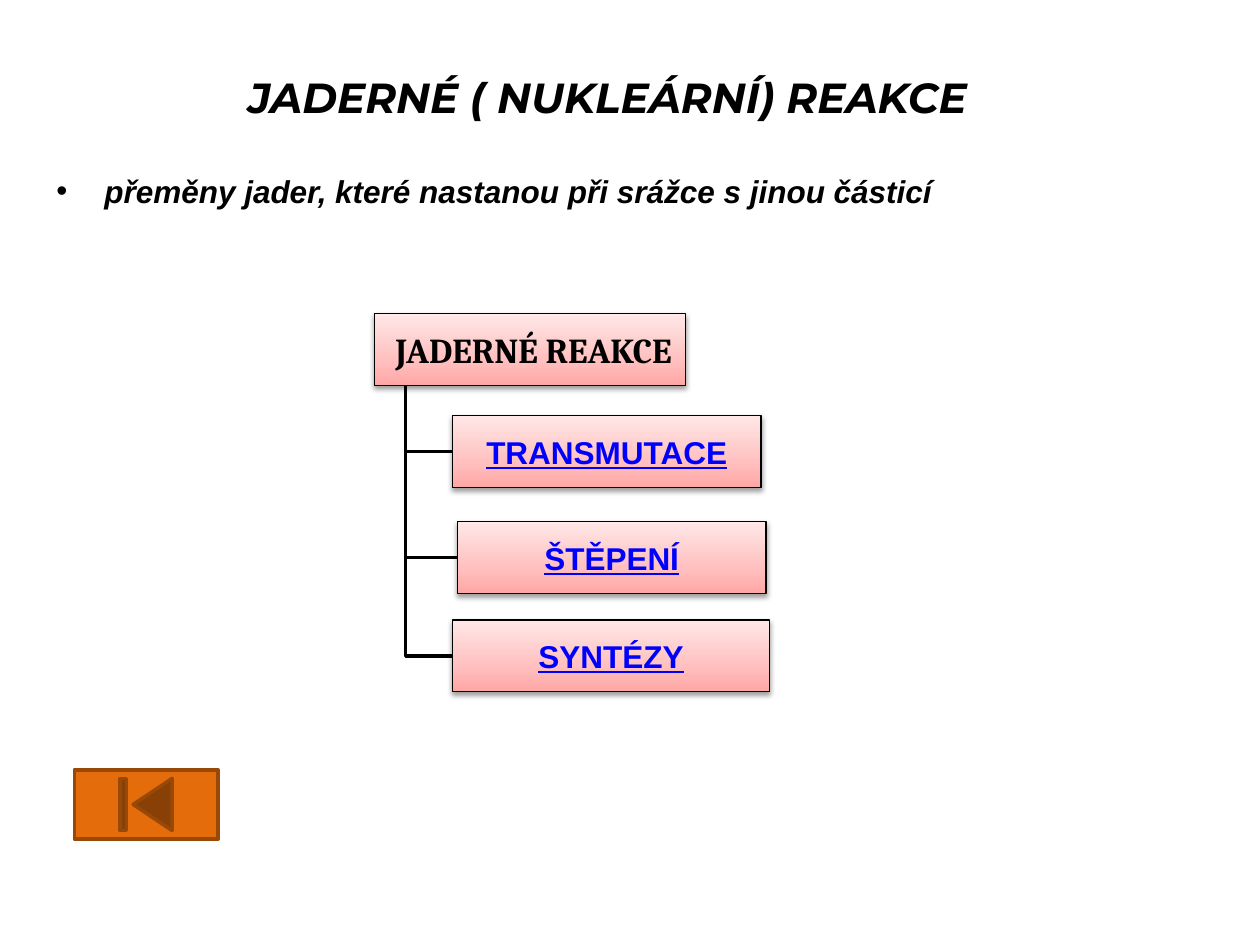
from lxml.etree import SubElement
from pptx import Presentation
from pptx.dml.color import RGBColor
from pptx.enum.shapes import MSO_SHAPE
from pptx.enum.text import MSO_ANCHOR, PP_ALIGN
from pptx.oxml import parse_xml
from pptx.oxml.ns import nsdecls, qn
from pptx.util import Inches, Pt

BLACK = RGBColor(0x00, 0x00, 0x00)
LINK_BLUE = RGBColor(0x00, 0x00, 0xFF)
ORANGE = RGBColor(0xE4, 0x6C, 0x0A)
BROWN = RGBColor(0x98, 0x48, 0x07)
PINK_STOPS = [
    (0, RGBColor(0xFF, 0xA6, 0xA5)),
    (35, RGBColor(0xFF, 0xC0, 0xBF)),
    (100, RGBColor(0xFF, 0xE7, 0xE7)),
]

HEADING = dict(name="Montserrat", size=Pt(24), bold=True, italic=True)
BODY = dict(name="Arial", size=Pt(18), bold=True, italic=True)
ROOT = dict(name="Cambria", size=Pt(20), bold=True)
LINK = dict(name="Arial", size=Pt(18), bold=True, underline=True)

BOX_H = 0.57
ROOT_BOX = (2.97, 2.49, 2.47)
TRUNK_X = 3.22
BRANCHES = [
    ("TRANSMUTACE", 3.59, 3.3, 2.45),
    ("ŠTĚPENÍ", 3.63, 4.14, 2.45),
    ("SYNTÉZY", 3.59, 4.92, 2.52),
]


def write(sp, text, font, color, align):
    tf = sp.text_frame
    tf.word_wrap = True
    tf.vertical_anchor = MSO_ANCHOR.MIDDLE
    p = tf.paragraphs[0]
    p.alignment = align
    r = p.add_run()
    r.text = text
    for key, value in font.items():
        setattr(r.font, key, value)
    r.font.color.rgb = color
    return p


def add_title(s, text):
    sp = s.shapes.title
    sp.left, sp.top, sp.width, sp.height = map(Inches, (0.35, 0.52, 8.94, 0.5))
    write(sp, text, HEADING, BLACK, PP_ALIGN.CENTER)


def add_bullet(s, text):
    sp = s.shapes.add_textbox(*map(Inches, (0.35, 1.31, 8.94, 0.41)))
    pPr = write(sp, text, BODY, BLACK, PP_ALIGN.LEFT)._p.get_or_add_pPr()
    indent = Inches(0.38)
    pPr.set("marL", str(indent))
    pPr.set("indent", str(-indent))
    SubElement(pPr, qn("a:buFont")).set("typeface", "Arial")
    SubElement(pPr, qn("a:buChar")).set("char", "•")


def style_box(sp):
    sp.line.color.rgb = BLACK
    sp.line.width = Pt(0.75)
    stops = "".join(
        f'<a:gs pos="{pos * 1000}"><a:srgbClr val="{color}"/></a:gs>'
        for pos, color in PINK_STOPS
    )
    spPr = sp._element.spPr
    spPr.find(qn("a:ln")).addprevious(parse_xml(
        f'<a:gradFill {nsdecls("a")}><a:gsLst>{stops}</a:gsLst>'
        '<a:lin ang="16200000" scaled="0"/></a:gradFill>'
    ))
    spPr.append(parse_xml(
        f'<a:effectLst {nsdecls("a")}>'
        f'<a:outerShdw blurRad="{Pt(3.1)}" dist="{Pt(1.6)}" dir="5400000" rotWithShape="0">'
        f'<a:srgbClr val="{BLACK}"><a:alpha val="38000"/></a:srgbClr>'
        '</a:outerShdw></a:effectLst>'
    ))


def add_box(s, text, x, y, w, font, color):
    sp = s.shapes.add_shape(MSO_SHAPE.RECTANGLE, *map(Inches, (x, y, w, BOX_H)))
    style_box(sp)
    write(sp, text, font, color, PP_ALIGN.CENTER)
    for side in ("left", "top", "right", "bottom"):
        setattr(sp.text_frame, f"margin_{side}", Inches(0.01))


def add_branch_line(s, x, y):
    start = (Inches(TRUNK_X), Inches(ROOT_BOX[1] + BOX_H))
    mid_y = Inches(y + BOX_H / 2)
    builder = s.shapes.build_freeform(*start)
    builder.add_line_segments([(start[0], mid_y), (Inches(x), mid_y)], close=False)
    sp = builder.convert_to_shape()
    sp.shadow.inherit = False
    sp.fill.background()
    sp.line.color.rgb = BLACK
    sp.line.width = Pt(2)


def add_back_button(s):
    sp = s.shapes.add_shape(
        MSO_SHAPE.ACTION_BUTTON_BEGINNING, *map(Inches, (0.59, 6.11, 1.14, 0.55))
    )
    sp.shadow.inherit = False
    sp.fill.solid()
    sp.fill.fore_color.rgb = ORANGE
    sp.line.color.rgb = BROWN
    sp.line.width = Pt(2)


def main():
    prs = Presentation()
    prs.slide_width, prs.slide_height = Inches(10), Inches(7.5)
    s = prs.slides.add_slide(prs.slide_layouts[5])
    add_title(s, "JADERNÉ ( NUKLEÁRNÍ) REAKCE")
    add_bullet(s, "přeměny jader, které nastanou při srážce s jinou částicí")
    for _, x, y, _ in reversed(BRANCHES):
        add_branch_line(s, x, y)
    add_box(s, " JADERNÉ REAKCE", *ROOT_BOX, ROOT, BLACK)
    for text, x, y, w in BRANCHES:
        add_box(s, text, x, y, w, LINK, LINK_BLUE)
    add_back_button(s)
    prs.save("out.pptx")


if __name__ == "__main__":
    main()
